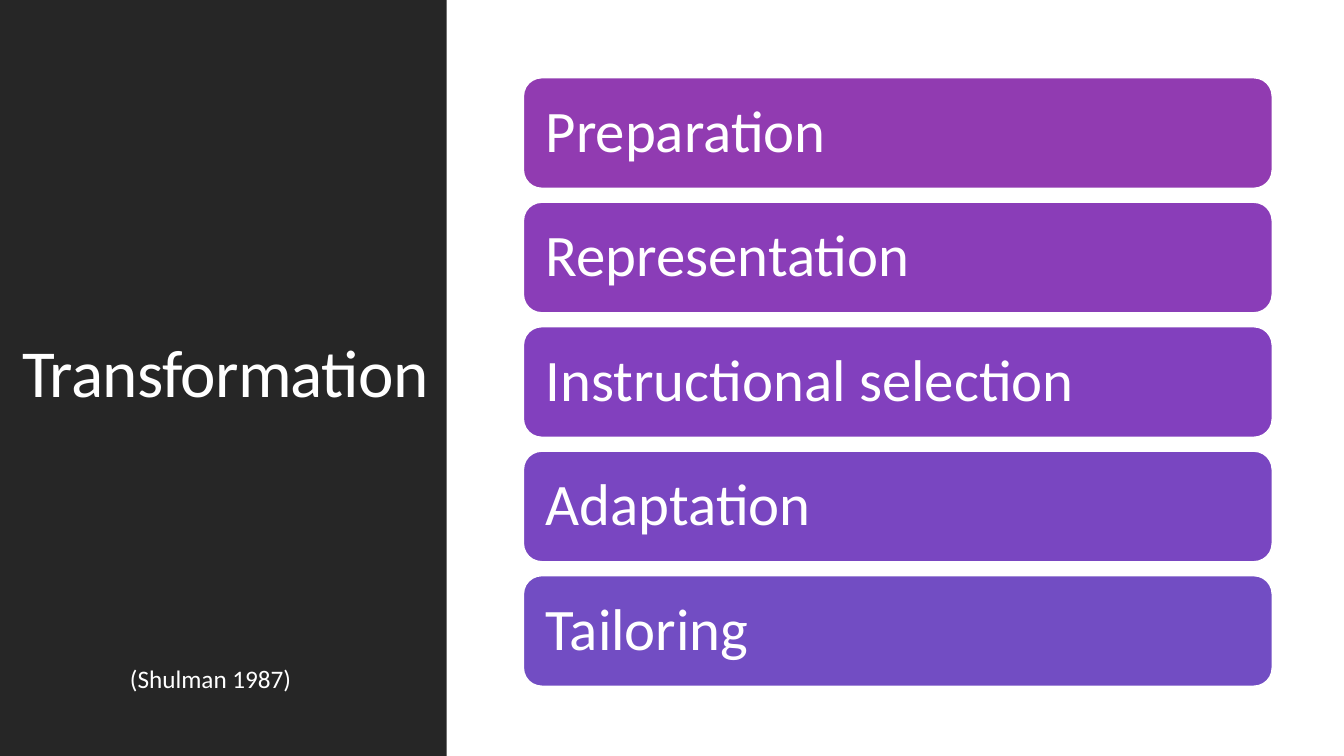
from pptx import Presentation
from pptx.dml.color import RGBColor
from pptx.enum.shapes import MSO_SHAPE
from pptx.enum.text import MSO_ANCHOR
from pptx.util import Inches, Pt

WHITE = RGBColor(0xFF, 0xFF, 0xFF)
DARK = RGBColor(0x26, 0x26, 0x26)
STEPS = [
    ("Preparation", RGBColor(0x91, 0x3B, 0xB1)),
    ("Representation", RGBColor(0x8A, 0x3D, 0xB8)),
    ("Instructional selection", RGBColor(0x82, 0x40, 0xBE)),
    ("Adaptation", RGBColor(0x79, 0x46, 0xC1)),
    ("Tailoring", RGBColor(0x72, 0x4D, 0xC3)),
]
FONT = "Calibri"
TOP = 0.77
PITCH = 1.235


def add_run(frame, text, size):
    run = frame.paragraphs[0].add_run()
    run.text = text
    run.font.name = FONT
    run.font.size = Pt(size)
    run.font.color.rgb = WHITE
    return run


def add_box(slide, kind, left, top, width, height, fill):
    box = slide.shapes.add_shape(
        kind, Inches(left), Inches(top), Inches(width), Inches(height))
    box.shadow.inherit = False
    box.fill.solid()
    box.fill.fore_color.rgb = fill
    box.line.fill.background()
    return box


def add_label(slide, left, top, width, height):
    label = slide.shapes.add_textbox(
        Inches(left), Inches(top), Inches(width), Inches(height))
    return label.text_frame


def add_title(slide, text):
    frame = add_label(slide, 0.12, 0.57, 4.35, 6.31)
    frame.word_wrap = True
    frame.vertical_anchor = MSO_ANCHOR.MIDDLE
    frame.paragraphs[0].line_spacing = 0.9
    run = add_run(frame, text, 48)
    run.font._element.set("spc", "-50")


def add_credit(slide, text):
    frame = add_label(slide, 1.19, 6.53, 1.82, 0.4)
    frame.word_wrap = False
    frame.paragraphs[0].space_after = Pt(6)
    add_run(frame, text, 18)


def add_step(slide, top, text, fill):
    box = add_box(slide, MSO_SHAPE.ROUNDED_RECTANGLE, 5.19, top, 7.43, 1.1, fill)
    box.line.color.rgb = WHITE
    box.line.width = Pt(1.25)
    frame = box.text_frame
    frame.word_wrap = True
    frame.vertical_anchor = MSO_ANCHOR.MIDDLE
    frame.margin_left = frame.margin_right = Inches(0.17)
    frame.margin_top = frame.margin_bottom = Inches(0.17)
    para = frame.paragraphs[0]
    para.alignment = PP_ALIGN.LEFT
    para.line_spacing = 0.9
    add_run(frame, text, 42)


def main():
    deck = Presentation()
    deck.slide_width = Inches(13.33)
    deck.slide_height = Inches(7.5)
    slide = deck.slides.add_slide(deck.slide_layouts[6])
    add_box(slide, MSO_SHAPE.RECTANGLE, 0, 0, 4.43, 7.5, DARK)
    add_title(slide, "Transformation")
    add_credit(slide, "(Shulman 1987)")
    for row, (text, fill) in enumerate(STEPS):
        add_step(slide, TOP + row * PITCH, text, fill)
    deck.save("out.pptx")


from pptx.enum.text import PP_ALIGN

if __name__ == "__main__":
    main()
